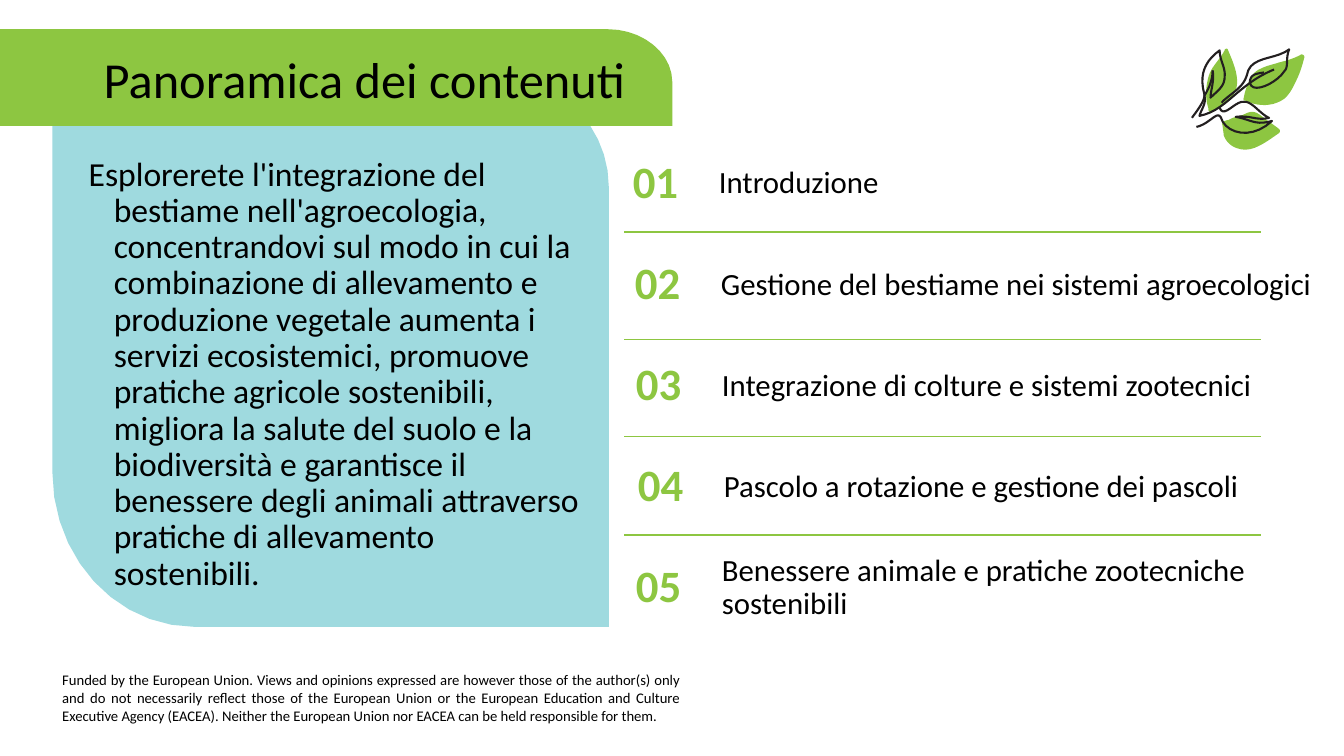
from pptx import Presentation
from pptx.dml.color import RGBColor
from pptx.enum.shapes import MSO_CONNECTOR
from pptx.enum.text import MSO_ANCHOR, PP_ALIGN
from pptx.oxml.ns import qn
from pptx.util import Pt
from lxml import etree

LEFT, MID, JUST = PP_ALIGN.LEFT, PP_ALIGN.CENTER, PP_ALIGN.JUSTIFY
TOP, CENTER = MSO_ANCHOR.TOP, MSO_ANCHOR.MIDDLE
STRAIGHT = MSO_CONNECTOR.STRAIGHT

# Content
COLORS = {"green": "8DC641", "teal": "9FDADF", "text": "000000", "ink": "231F20"}
TITLE = "Panoramica dei contenuti"
INTRO = ("Esplorerete l'integrazione del bestiame nell'agroecologia, concentrandovi "
         "sul modo in cui la combinazione di allevamento e produzione vegetale aumenta "
         "i servizi ecosistemici, promuove pratiche agricole sostenibili, migliora la "
         "salute del suolo e la biodiversità e garantisce il benessere degli animali "
         "attraverso pratiche di allevamento sostenibili.")
FUNDING = ("Funded by the European Union. Views and opinions expressed are however those "
           "of the author(s) only and do not necessarily reflect those of the European "
           "Union or the European Education and Culture Executive Agency (EACEA). Neither "
           "the European Union nor EACEA can be held responsible for them.")
# Topic, left of its number, width of its text
TOPICS = [
    ("Introduzione", 440.6, 351.4),
    ("Gestione del bestiame nei sistemi agroecologici", 442.1, 452.2),
    ("Integrazione di colture e sistemi zootecnici", 442.8, 424.1),
    ("Pascolo a rotazione e gestione dei pascoli", 444.2, 421.9),
    ("Benessere animale e pratiche zootecniche sostenibili", 442.8, 434.2),
]
RULES = [165.6, 242.6, 311.8, 382.3]

# Outlines: a start point, then lines (x, y) or curves (two controls and an end)
PANEL = [(434.9, 447.8), (139, 447.8), (82.8, 447.8, 37.4, 398.2, 37.4, 337),
         (37.4, 59), (365.8, 59), (403.9, 59, 434.9, 92.9, 434.9, 133.9)]
BANNER = [(-1.4, 20.9), (434.2, 20.9), (459.4, 20.9, 480.2, 38.2, 480.2, 58.3),
          (480.2, 90), (0, 90), (0, 34.6), (0, 31.7, 0, 29.5, 0, 26.6)]
LEAVES = [
    [(867.6, 79.2), (874.8, 75.6, 882, 69.8, 883.4, 61.9),
     (884.9, 53.3, 880.6, 43.9, 877, 35.3), (877, 34.6, 874.8, 34.6, 874.8, 36),
     (872.6, 40.3, 869.8, 43.2, 866.9, 47.5), (864.7, 50.4, 863.3, 54, 862.6, 57.6),
     (861.1, 64.1, 861.1, 71.3, 863.3, 77.8), (862.6, 78.5, 864, 80.6, 865.4, 79.9)],
    [(917.3, 70.6), (921.6, 67, 923.8, 61.9, 925.9, 57.6),
     (928.8, 51.8, 930.2, 46.8, 931.7, 41), (931.7, 39.6, 931, 38.9, 929.5, 38.9),
     (924.5, 41.8, 919.4, 43.2, 913.7, 44.6), (909.4, 46.1, 905, 46.8, 900.7, 49),
     (897.1, 50.4, 894.2, 53.3, 892.8, 56.9), (890.6, 61.2, 889.2, 65.5, 888.5, 69.8),
     (887.8, 71.3, 888.5, 72, 889.9, 72), (898.6, 76.3, 909.4, 76.3, 917.3, 70.6)],
    [(913.7, 95), (914.4, 94.3, 914.4, 92.9, 913.7, 92.2),
     (910.1, 89.3, 906.5, 87.1, 902.9, 84.2), (900, 82.1, 897.8, 79.9, 894.2, 79.9),
     (891.4, 79.9, 888.5, 82.1, 885.6, 82.8), (882.7, 83.5, 879.8, 84.2, 877.7, 85.7),
     (876.5, 85.7, 874.8, 86.4, 873.4, 87.1), (872.9, 88, 872.9, 89, 873.4, 90),
     (873.4, 92.2, 874.1, 95, 874.1, 96.5), (875.5, 100.8, 879.1, 104.4, 883.4, 105.8),
     (894.2, 110.2, 905, 100.8, 913.7, 95)],
]
STEMS = [
    [(851.4, 84.2), (856.1, 77.8, 861.8, 70.6, 860, 66.2),
     (856.8, 53.3, 860.4, 43.9, 871.2, 36), (871.2, 43.2, 875.5, 48.2, 874.8, 54.7),
     (874.8, 61.9, 869.8, 64.8, 864.7, 69.8), (864.7, 64.8, 867.6, 57.6, 866.2, 50.4)],
    [(866.2, 50.4), (866.2, 57.6, 863.3, 63.4, 860.4, 68.4),
     (861.8, 74.2, 858.2, 77.8, 856.8, 82.8), (871.2, 79.9, 878.4, 69.8, 892.1, 59.8),
     (897.1, 56.2, 902.9, 52.6, 910.1, 49.7)],
    [(872.6, 73.4), (878.4, 67, 887.8, 63.4, 890.6, 54),
     (892.8, 39.6, 910.8, 43.2, 920.9, 35.3), (918, 42.5, 920.9, 47.5, 917.3, 51.1),
     (911.5, 59.8, 894.2, 67.7, 892.8, 59), (892.8, 52.6, 898.6, 52.6, 902.9, 51.8)],
    [(854.6, 90.7), (864, 88.6, 869, 79.2, 871.9, 83.5),
     (875.5, 95.8, 894.2, 100.1, 908.6, 86.4), (896.4, 90, 892.8, 85, 882.7, 83.5),
     (892.8, 82.1, 897.8, 86.4, 906.5, 84.2), (900, 81.4, 894.2, 72, 888.5, 72.7),
     (882, 72, 874.1, 85, 871.2, 77)],
]


def color(name):
    return RGBColor.from_string(COLORS[name])


def trace(parts, steps=10):
    """Turn an outline into a list of points."""
    dots = [parts[0]]
    for part in parts[1:]:
        if len(part) == 2:
            dots.append(part)
            continue
        ends = [dots[-1], part[:2], part[2:4], part[4:]]
        for n in range(1, steps + 1):
            t = n / steps
            mix = ((1 - t) ** 3, 3 * t * (1 - t) ** 2, 3 * t * t * (1 - t), t ** 3)
            dots.append(tuple(sum(m * p[k] for m, p in zip(mix, ends)) for k in (0, 1)))
    return dots


def draw(slide, parts, fill=None, line=None):
    dots = [(Pt(x), Pt(y)) for x, y in trace(parts)]
    build = slide.shapes.build_freeform(*dots[0])
    build.add_line_segments(dots[1:], close=fill is not None)
    shape = build.convert_to_shape()
    shape.shadow.inherit = False
    if fill:
        shape.fill.solid()
        shape.fill.fore_color.rgb = color(fill)
    else:
        shape.fill.background()
    if line:
        shape.line.color.rgb = color(line)
        shape.line.width = Pt(1.5)
    else:
        shape.line.fill.background()


def write(slide, text, box, size=22, tone="text", bold=False, align=LEFT,
          anchor=CENTER, space=0.9, hang=0):
    frame = slide.shapes.add_textbox(*map(Pt, box)).text_frame
    frame.word_wrap = True
    frame.vertical_anchor = anchor
    para = frame.paragraphs[0]
    para.alignment, para.line_spacing = align, space
    if hang:
        props = para._p.get_or_add_pPr()
        props.set("marL", str(Pt(hang)))
        props.set("indent", str(-Pt(hang)))
    run = para.add_run()
    run.text = text
    font = run.font
    font.name, font.size, font.bold = "Calibri", Pt(size), bold
    font.color.rgb = color(tone)


def main():
    deck = Presentation()
    deck.slide_width, deck.slide_height = Pt(960), Pt(540)
    slide = deck.slides.add_slide(deck.slide_layouts[6])

    # Panel and banner
    draw(slide, PANEL, fill="teal")
    draw(slide, BANNER, fill="green")

    # Rules between topics
    for y in RULES:
        rule = slide.shapes.add_connector(STRAIGHT, Pt(900.7), Pt(y), Pt(445.7), Pt(y))
        rule.line.color.rgb = color("green")
        rule.line.width = Pt(1)
        etree.SubElement(rule._element.spPr, qn("a:effectLst"))

    # Title, introduction and funding note
    write(slide, FUNDING, (37.4, 475.9, 455.8, 47.5), size=10.5, align=JUST,
          anchor=TOP, space=1)
    write(slide, INTRO, (56.2, 108.7, 370.8, 313.9), size=24, anchor=TOP, hang=18)
    write(slide, TITLE, (67, 30.2, 396.7, 56.9), size=36)

    # Numbered topics
    for n, (topic, x, wide) in enumerate(TOPICS):
        y = 104.4 + 72.2 * n
        write(slide, f"{n + 1:02}", (x, y, 55.4, 54), size=32, tone="green",
              bold=True, align=MID)
        write(slide, topic, (x + 65.8, y, wide, 54))

    # Leaf drawing
    for leaf in LEAVES:
        draw(slide, leaf, fill="green")
    for stem in STEMS:
        draw(slide, stem, line="ink")

    deck.save("out.pptx")


if __name__ == "__main__":
    main()
